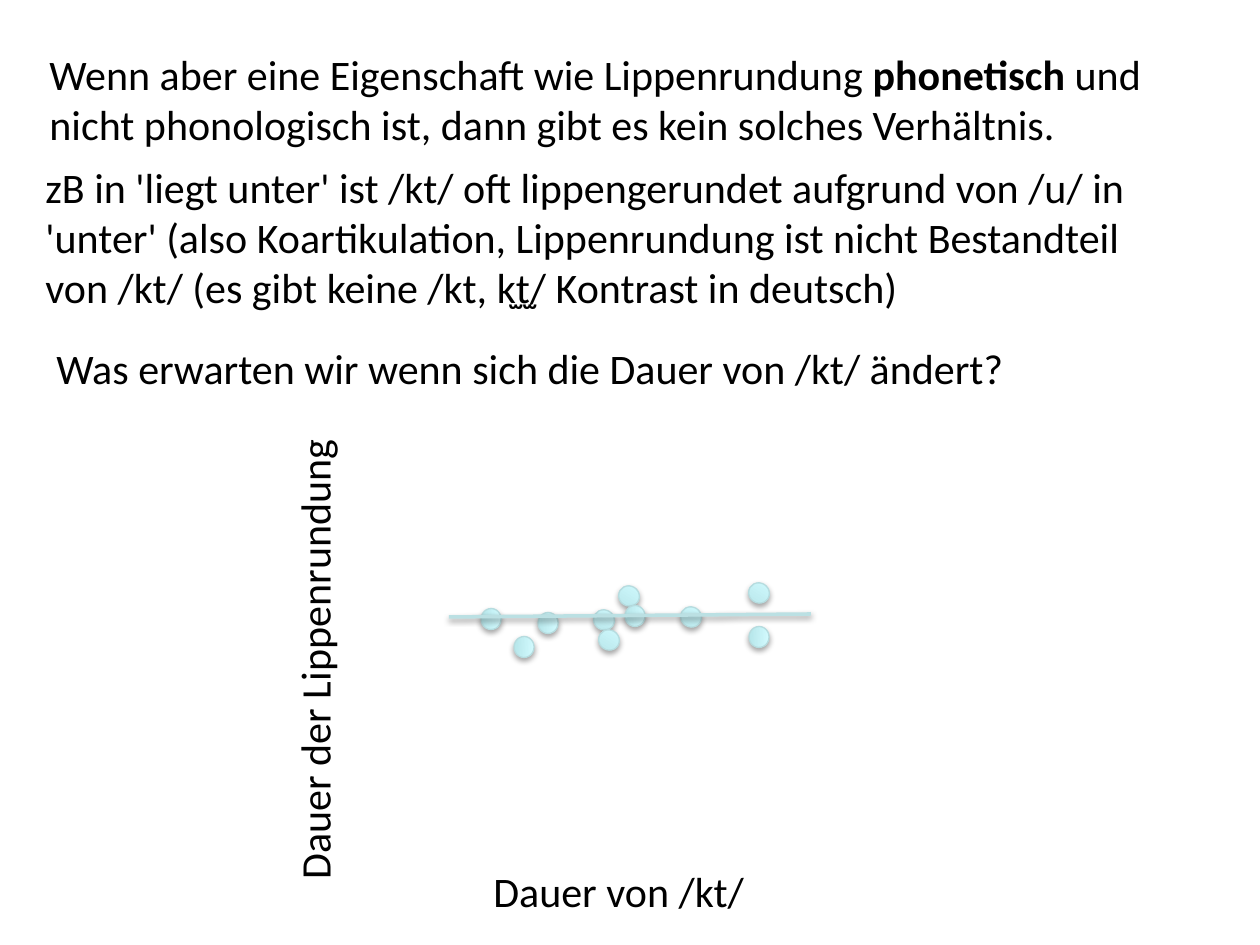
from lxml import etree
from pptx import Presentation
from pptx import util as u
from pptx.dml.color import RGBColor
from pptx.enum import shapes, text
from pptx.oxml import ns

DOTS = [
    (629, 596, 31.9), (604, 620, 31.9), (635, 616, 92.5), (548, 623, 92.5),
    (691, 617, 31.9), (609, 640, 31.9), (759, 637, 92.5), (524, 647, 92.5),
    (491, 619, 92.5), (759, 593, 31.9),
]


def px(n):
    """Turn pixels into EMU."""
    return u.Emu(round(n * 914400 / 126))


def tint(color, code):
    """Set a colour from a hex string."""
    color.rgb = RGBColor.from_string(code)


def shade(shape, dist, alpha):
    """Give a shape a soft shadow that falls straight down."""
    props = shape._element.spPr
    for old in props.findall(ns.qn("a:effectLst")):
        props.remove(old)
    glow = etree.SubElement(props, ns.qn("a:effectLst"))
    drop = etree.SubElement(
        glow, ns.qn("a:outerShdw"), blurRad="40000", dist=str(dist),
        dir="5400000", rotWithShape="0")
    black = etree.SubElement(drop, ns.qn("a:srgbClr"), val="000000")
    etree.SubElement(black, ns.qn("a:alpha"), val=str(alpha * 1000))


def label(slide, parts, left, top, width, height, wrap=True, turn=0):
    """Add a text box whose every second part is bold."""
    box = slide.shapes.add_textbox(px(left), px(top), px(width), px(height))
    box.rotation = turn
    frame = box.text_frame
    frame.word_wrap = wrap
    frame.auto_size = text.MSO_AUTO_SIZE.SHAPE_TO_FIT_TEXT
    for i, part in enumerate(parts):
        run = frame.paragraphs[0].add_run()
        run.text = part
        run.font.size = u.Pt(24)
        run.font.name = "Calibri"
        run.font.bold = i % 2 == 1
        tint(run.font.color, "000000")


def dot(group, x, y, turn):
    """Add one data point centred on x and y."""
    ball = group.shapes.add_shape(
        shapes.MSO_SHAPE.OVAL, px(x - 10.5), px(y - 10), px(21), px(20))
    ball.rotation = turn
    ball.fill.gradient()
    ball.fill.gradient_angle = 90
    for stop, place, code in zip(
            ball.fill.gradient_stops, (0, 1), ("B5E5E9", "D3FBFF")):
        stop.position = place
        tint(stop.color, code)
    tint(ball.line.color, "B6DCDF")
    ball.line.width = u.Pt(0.75)
    shade(ball, 23000, 35)


def trend(group, x1, y1, x2, y2):
    """Add the trend line through the data points."""
    line = group.shapes.add_connector(
        shapes.MSO_CONNECTOR.STRAIGHT, px(x1), px(y1), px(x2), px(y2))
    tint(line.line.color, "BBE0E3")
    line.line.width = u.Pt(2)
    shade(line, 20000, 38)


def main():
    """Build and save the slide."""
    deck = Presentation()
    deck.slide_width, deck.slide_height = px(1260), px(945)
    slide = deck.slides.add_slide(deck.slide_layouts[6])
    label(slide, [
        "Wenn aber eine Eigenschaft wie Lippenrundung ", "phonetisch",
        " und nicht phonologisch ist, dann gibt es kein solches Verhältnis.",
    ], 37, 42, 1142, 115)
    label(slide, [
        "zB in 'liegt unter' ist /kt/ oft lippengerundet aufgrund von /u/ in "
        "'unter' (also Koartikulation, Lippenrundung ist nicht Bestandteil "
        "von /kt/ (es gibt keine /kt, k̫t̫/ Kontrast in deutsch)",
    ], 33, 155, 1163, 165)
    label(slide, ["Was erwarten wir wenn sich die Dauer von /kt/ ändert?"],
          44, 336, 1133, 63)
    label(slide, ["Dauer von /kt/"], 481, 859, 278, 63, wrap=False)
    label(slide, ["Dauer der Lippenrundung"], 79, 625, 470, 63,
          wrap=False, turn=270)
    plot = slide.shapes.add_group_shape()
    for x, y, turn in DOTS:
        dot(plot, x, y, turn)
    trend(plot, 449, 617, 811, 614)
    deck.save("out.pptx")


if __name__ == "__main__":
    main()
